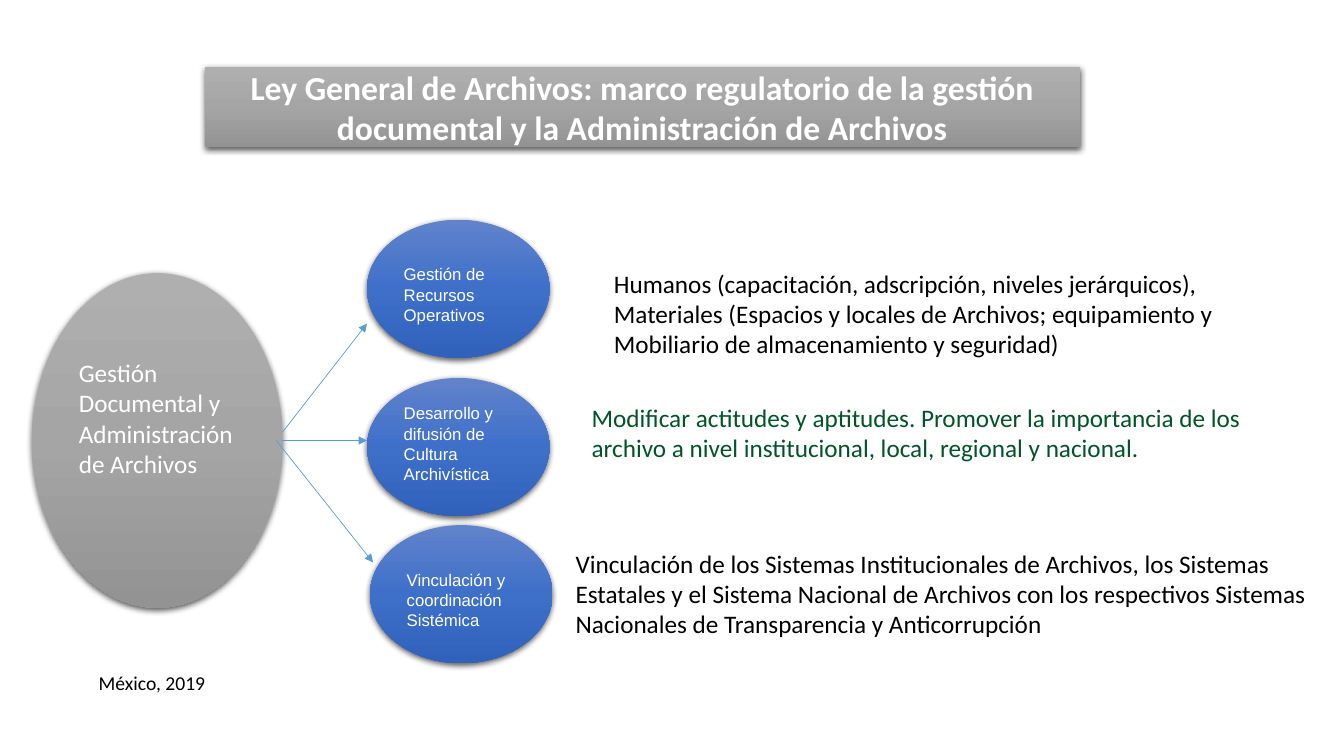
from lxml import etree
from pptx import Presentation
from pptx.dml.color import RGBColor
from pptx.enum.shapes import MSO_CONNECTOR, MSO_SHAPE
from pptx.enum.text import MSO_ANCHOR, MSO_AUTO_SIZE, PP_ALIGN
from pptx.oxml import parse_xml
from pptx.oxml.ns import qn
from pptx.util import Inches, Pt

ELLIPSE = MSO_SHAPE.OVAL
STRAIGHT = MSO_CONNECTOR.STRAIGHT
TOP, MIDDLE = MSO_ANCHOR.TOP, MSO_ANCHOR.MIDDLE
LEFT, CENTER = PP_ALIGN.LEFT, PP_ALIGN.CENTER
FIXED, GROW = MSO_AUTO_SIZE.NONE, MSO_AUTO_SIZE.SHAPE_TO_FIT_TEXT

COLORS = {"white": "FFFFFF", "black": "000000", "green": "005426", "arrow": "5B9BD5"}
GRAYS = ("AFAFAF", "A5A5A5", "939393")
BLUES = ("6183CB", "3E70CA", "3062BB")
NS = 'xmlns:a="http://schemas.openxmlformats.org/drawingml/2006/main"'


def add_sheen(shape, shades):
    """Give a shape a vertical three-stop gradient, no outline and a soft shadow below."""
    stops = "".join(
        f'<a:gs pos="{i * 50000}"><a:srgbClr val="{shade}"/></a:gs>'
        for i, shade in enumerate(shades))
    for xml in (
        f'<a:gradFill {NS} rotWithShape="1"><a:gsLst>{stops}</a:gsLst>'
        '<a:lin ang="5400000" scaled="0"/></a:gradFill>',
        f'<a:ln {NS}><a:noFill/></a:ln>',
        f'<a:effectLst {NS}><a:outerShdw blurRad="57150" dist="19050" dir="5400000" '
        'algn="ctr" rotWithShape="0"><a:srgbClr val="000000"><a:alpha val="63000"/>'
        '</a:srgbClr></a:outerShdw></a:effectLst>',
    ):
        shape._element.spPr.append(parse_xml(xml))


def write(shape, text, size, color, font="Calibri", bold=False, align=LEFT,
          anchor=TOP, wrap=True, fit=FIXED):
    frame = shape.text_frame
    frame.text = text
    frame.word_wrap = wrap
    frame.auto_size = fit
    frame.vertical_anchor = anchor
    for paragraph in frame.paragraphs:
        paragraph.alignment = align
        for run in paragraph.runs:
            run.font.name = font
            run.font.size = Pt(size)
            run.font.bold = bold
            run.font.color.rgb = RGBColor.from_string(COLORS[color])


prs = Presentation()
prs.slide_width, prs.slide_height = Inches(13.33), Inches(7.5)
slide = prs.slides.add_slide(prs.slide_layouts[5])
shapes = slide.shapes

# Title banner
title = shapes.title
title.left, title.top = Inches(2.03), Inches(0.66)
title.width, title.height = Inches(8.68), Inches(0.8)
title._element.spPr.append(parse_xml(f'<a:prstGeom {NS} prst="roundRect"><a:avLst/></a:prstGeom>'))
add_sheen(title, GRAYS)
write(title, "Ley General de Archivos: marco regulatorio de la gestión documental "
      "y la Administración de Archivos", 24, "white", bold=True, align=CENTER, anchor=MIDDLE)

# Main topic and its three branches: left, top, width, height, top margin
MAIN = (0.32, 2.71, 2.48, 3.32, 0.35)
BRANCH_SIZE = (1.81, 1.37)
topics = [
    ("Gestión Documental y Administración de Archivos", MAIN, GRAYS, 18, "Calibri"),
    ("Gestión de Recursos Operativos", (3.64, 2.18, *BRANCH_SIZE, 0.24), BLUES, 12, "Arial"),
    ("Desarrollo y difusión de Cultura Archivística", (3.64, 3.75, *BRANCH_SIZE, 0.05),
     BLUES, 12, "Arial"),
    ("Vinculación y coordinación Sistémica", (3.67, 5.21, *BRANCH_SIZE, 0.24),
     BLUES, 12, "Arial"),
]
for text, (*box, top_margin), shades, size, font in topics:
    topic = shapes.add_shape(ELLIPSE, *map(Inches, box))
    add_sheen(topic, shades)
    write(topic, text, size, "white", font)
    topic.text_frame.margin_top = Inches(top_margin)

# Arrows from the main topic to each branch
for ends in [(2.8, 4.29, 3.64, 3.21), (2.8, 4.37, 3.64, 4.37), (2.74, 4.37, 3.7, 5.58)]:
    arrow = shapes.add_connector(STRAIGHT, *map(Inches, ends))
    arrow.line.width = Pt(0.5)
    arrow.line.color.rgb = RGBColor.from_string(COLORS["arrow"])
    etree.SubElement(arrow.line._get_or_add_ln(), qn("a:tailEnd"), type="triangle")
    etree.SubElement(arrow._element.spPr, qn("a:effectLst"))

# Explanations beside the branches, and the dateline
notes = [
    ("Humanos (capacitación, adscripción, niveles jerárquicos),\n"
     "Materiales (Espacios y locales de Archivos; equipamiento y\n"
     "Mobiliario de almacenamiento y seguridad)",
     (5.99, 2.61, 6.21, 1.01), 18, "black", False),
    ("Modificar actitudes y aptitudes. Promover la importancia de los archivo a nivel "
     "institucional, local, regional y nacional.",
     (5.77, 3.94, 6.67, 0.71), 18, "green", True),
    ("Vinculación de los Sistemas Institucionales de Archivos, los Sistemas\n"
     "Estatales y el Sistema Nacional de Archivos con los respectivos Sistemas\n"
     "Nacionales de Transparencia y Anticorrupción",
     (5.61, 5.39, 7.52, 1.01), 18, "black", False),
    ("México, 2019", (0.88, 6.61, 2.82, 0.34), 14, "black", True),
]
for text, box, size, color, wrap in notes:
    note = shapes.add_textbox(*map(Inches, box))
    write(note, text, size, color, wrap=wrap, fit=GROW)

prs.save("out.pptx")
